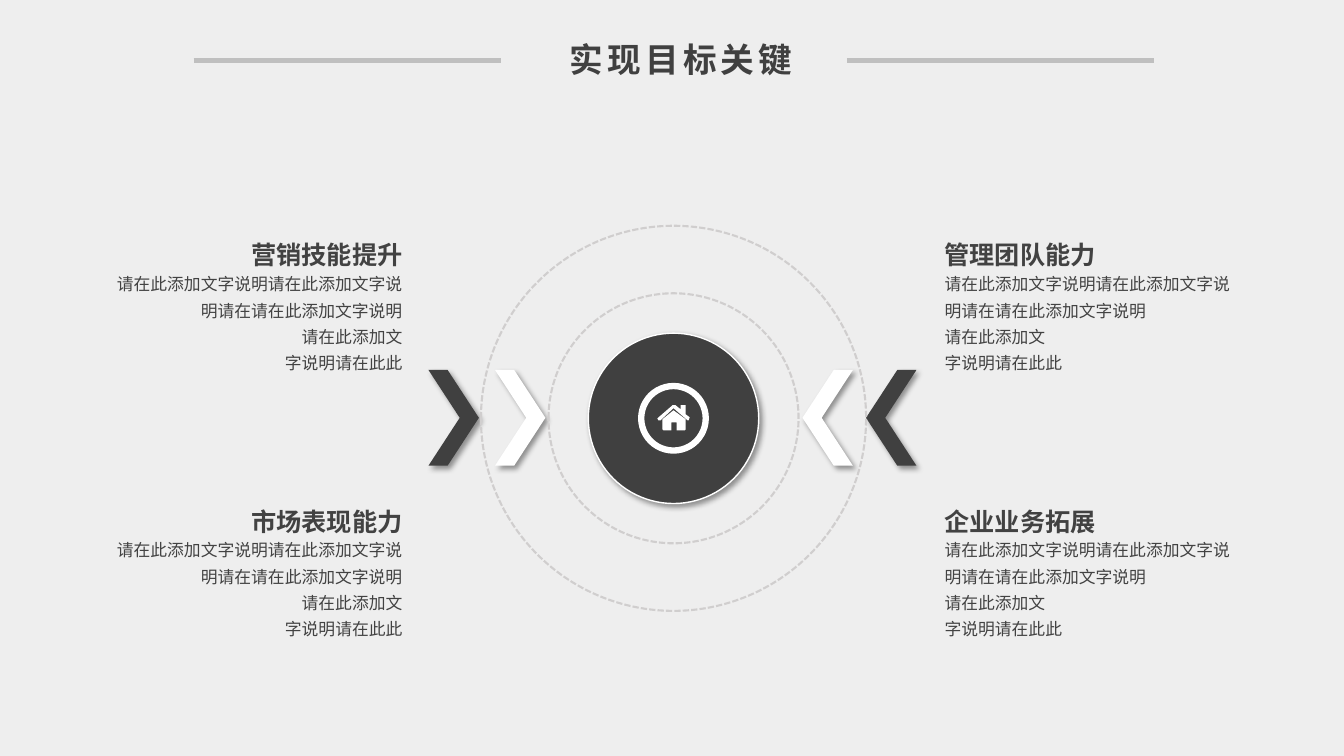
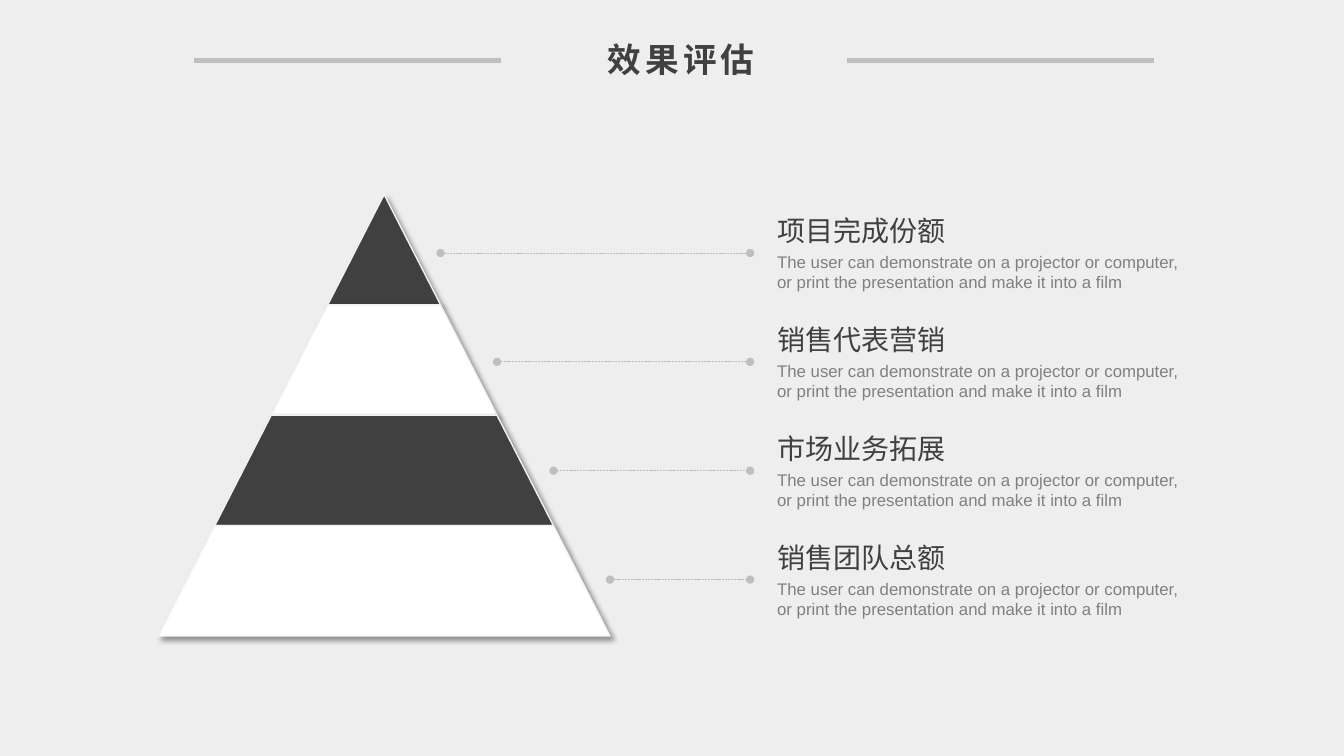
"""Build two slides, converging abilities and a pyramid, under a shared header."""
from dataclasses import dataclass

from lxml import etree
from pptx import Presentation
from pptx.dml.color import RGBColor
from pptx.enum import dml, shapes, text
from pptx.oxml.ns import qn
from pptx.util import Inches, Pt


@dataclass(frozen=True)
class Theme:
    back: str = "EEEEEE"
    dark: str = "404040"
    ink: str = "424242"
    muted: str = "808080"
    rule: str = "BFBFBF"
    ring: str = "D0CECE"
    edge: str = "F2F2F2"
    white: str = "FFFFFF"
    cjk: str = "Noto Sans CJK SC"
    latin: str = "Arial"
    title: int = 24
    item: int = 20
    heading: int = 18
    body: int = 12


T = Theme()
CENTER_X, CENTER_Y = 6.68, 4.15
APEX_X, APEX_Y = 3.81, 1.93
HALF_STEP, BAND_HEIGHT = 0.56, 4.38 / 4
ABILITY_BODY = [
    "请在此添加文字说明请在此添加文字说明请在请在此添加文字说明",
    "请在此添加文",
    "字说明请在此此",
]
RESULT_BODY = ("The user can demonstrate on a projector or computer, "
               "or print the presentation and make it into a film")
ROOF = [(6.83, 4.17), (6.82, 4.17), (6.68, 4.05), (6.55, 4.17), (6.53, 4.17),
        (6.52, 4.15), (6.67, 4.02), (6.7, 4.02), (6.75, 4.06), (6.75, 4.02),
        (6.8, 4.02), (6.8, 4.11), (6.84, 4.14)]
WALLS = [(6.8, 4.26), (6.79, 4.27), (6.71, 4.27), (6.71, 4.19), (6.66, 4.19),
         (6.66, 4.27), (6.58, 4.27), (6.57, 4.26), (6.57, 4.16), (6.68, 4.07),
         (6.8, 4.16)]


def rgb(color):
    return RGBColor.from_string(color)


def place(sp, x, y, w, h):
    sp.left, sp.top, sp.width, sp.height = (Inches(v) for v in (x, y, w, h))


def write(sp, lines, size, color, font=T.cjk, bold=False,
          align=text.PP_ALIGN.LEFT, spacing=None, tracking=None):
    tf = sp.text_frame
    tf.word_wrap = True
    tf.auto_size = text.MSO_AUTO_SIZE.SHAPE_TO_FIT_TEXT
    tf.vertical_anchor = text.MSO_ANCHOR.TOP
    tf.text = "\n".join(lines)
    for p in tf.paragraphs:
        p.alignment = align
        p.line_spacing = spacing
        p.font.size = Pt(size)
        p.font.bold = bold
        p.font.color.rgb = rgb(color)
        p.font.name = font
        props = p._p.pPr.find(qn("a:defRPr"))
        etree.SubElement(props, qn("a:ea"), typeface=T.cjk)
        if tracking:
            props.set("spc", str(tracking * 100))


def add_text(s, box, lines, size, color, **style):
    sp = s.shapes.add_textbox(*(Inches(v) for v in box))
    write(sp, lines, size, color, **style)


def paint(sp, fill=None, line=None, width=1, dash=None, shadow=False):
    sp.shadow.inherit = False
    if fill:
        sp.fill.solid()
        sp.fill.fore_color.rgb = rgb(fill)
    else:
        sp.fill.background()
    if line:
        sp.line.color.rgb = rgb(line)
        sp.line.width = Pt(width)
        sp.line.dash_style = dash
    else:
        sp.line.fill.background()
    if shadow:
        effects = sp._element.spPr.find(qn("a:effectLst"))
        outer = etree.SubElement(effects, qn("a:outerShdw"), blurRad=str(Pt(4)),
                                 dist=str(Pt(3)), dir="2700000", algn="tl",
                                 rotWithShape="0")
        color = etree.SubElement(outer, qn("a:srgbClr"), val="000000")
        etree.SubElement(color, qn("a:alpha"), val="40000")


def add_line(s, x1, x2, y, width, dotted=False):
    cx = s.shapes.add_connector(shapes.MSO_CONNECTOR.STRAIGHT, Inches(x1),
                                Inches(y), Inches(x2), Inches(y))
    cx.line.color.rgb = rgb(T.rule)
    cx.line.width = Pt(width)
    if dotted:
        cx.line.dash_style = dml.MSO_LINE.SQUARE_DOT
        for end in ("a:headEnd", "a:tailEnd"):
            etree.SubElement(cx.line._get_or_add_ln(), qn(end), type="oval")
    etree.SubElement(cx._element.spPr, qn("a:effectLst"))


def add_circle(s, diameter, **look):
    corner = (CENTER_X - diameter / 2, CENTER_Y - diameter / 2)
    sp = s.shapes.add_shape(shapes.MSO_SHAPE.OVAL, *(Inches(v) for v in corner),
                            Inches(diameter), Inches(diameter))
    paint(sp, **look)


def add_chevron(s, x, color, flip):
    sp = s.shapes.add_shape(shapes.MSO_SHAPE.CHEVRON, Inches(x), Inches(3.67),
                            Inches(0.5), Inches(0.95))
    sp.adjustments[0] = 0.62
    if flip:
        sp._element.spPr.xfrm.set("flipH", "1")
    paint(sp, color, shadow=True)


def add_outline(s, contours, **look):
    builder = None
    for contour in contours:
        points = [(Inches(x), Inches(y)) for x, y in contour]
        if builder is None:
            builder = s.shapes.build_freeform(*points[0], scale=1.0)
        else:
            builder.move_to(*points[0])
        builder.add_line_segments(points[1:], close=True)
    paint(builder.convert_to_shape(), **look)


def add_slide(prs, title):
    s = prs.slides.add_slide(prs.slide_layouts[5])
    place(s.shapes.title, 5.02, 0.34, 3.47, 0.5)
    write(s.shapes.title, [title], T.title, T.dark, bold=True,
          align=text.PP_ALIGN.CENTER, tracking=3)
    for x in (1.92, 8.4):
        add_line(s, x, x + 3.05, 0.6, 3)
    return s


def add_ability(s, heading, right_side, y):
    align = text.PP_ALIGN.LEFT if right_side else text.PP_ALIGN.RIGHT
    for lines, width, dy, height, size, font, bold in (
            ([heading], 2.33, 0, 0.46, T.heading, T.latin, True),
            (ABILITY_BODY, 3.05, 0.37, 1.15, T.body, T.cjk, False)):
        x = 9.27 if right_side else 4.09 - width
        add_text(s, (x, y + dy, width, height), lines, size, T.ink, font=font,
                 bold=bold, align=align, spacing=1.3)


def add_band(s, i):
    top, bottom = (APEX_Y + n * BAND_HEIGHT for n in (i, i + 1))
    near, far = i * HALF_STEP, (i + 1) * HALF_STEP
    corners = [(APEX_X - far, bottom), (APEX_X - near, top),
               (APEX_X + near, top), (APEX_X + far, bottom)]
    add_outline(s, [corners], fill=T.white if i % 2 else T.dark, line=T.edge,
                shadow=True)


def add_result(s, i, heading):
    y = 2.51 + 1.08 * i
    add_line(s, APEX_X + (i + 1) * HALF_STEP, 7.44, y, 0.5, dotted=True)
    add_text(s, (7.61, y - 0.44, 2.67, 0.44), [heading], T.item, T.dark)
    add_text(s, (7.61, y - 0.06, 4.3, 0.5), [RESULT_BODY], T.body, T.muted,
             font=T.latin)


def build_goal_slide(prs):
    s = add_slide(prs, "实现目标关键")
    add_circle(s, 1.69, fill=T.dark, line=T.white, shadow=True)
    for x, color, flip in ((4.91, T.white, False), (7.96, T.white, True),
                           (4.25, T.dark, False), (8.59, T.dark, True)):
        add_chevron(s, x, color, flip)
    add_circle(s, 0.64, fill=T.dark, line=T.white, width=4.5)
    add_outline(s, [ROOF, WALLS], fill=T.white)
    for diameter in (3.82, 2.48):
        add_circle(s, diameter, line=T.ring, width=1.5,
                   dash=dml.MSO_LINE.SQUARE_DOT)
    for heading, right_side, y in (("管理团队能力", True, 2.24),
                                   ("企业业务拓展", True, 4.88),
                                   ("营销技能提升", False, 2.24),
                                   ("市场表现能力", False, 4.88)):
        add_ability(s, heading, right_side, y)


def build_result_slide(prs):
    s = add_slide(prs, "效果评估")
    headings = ("项目完成份额", "销售代表营销", "市场业务拓展", "销售团队总额")
    for i in range(len(headings)):
        add_band(s, i)
    for i, heading in enumerate(headings):
        add_result(s, i, heading)


def main():
    prs = Presentation()
    prs.slide_width, prs.slide_height = Inches(13.33), Inches(7.5)
    background = prs.slide_master.background.fill
    background.solid()
    background.fore_color.rgb = rgb(T.back)
    build_goal_slide(prs)
    build_result_slide(prs)
    prs.save("out.pptx")


if __name__ == "__main__":
    main()
